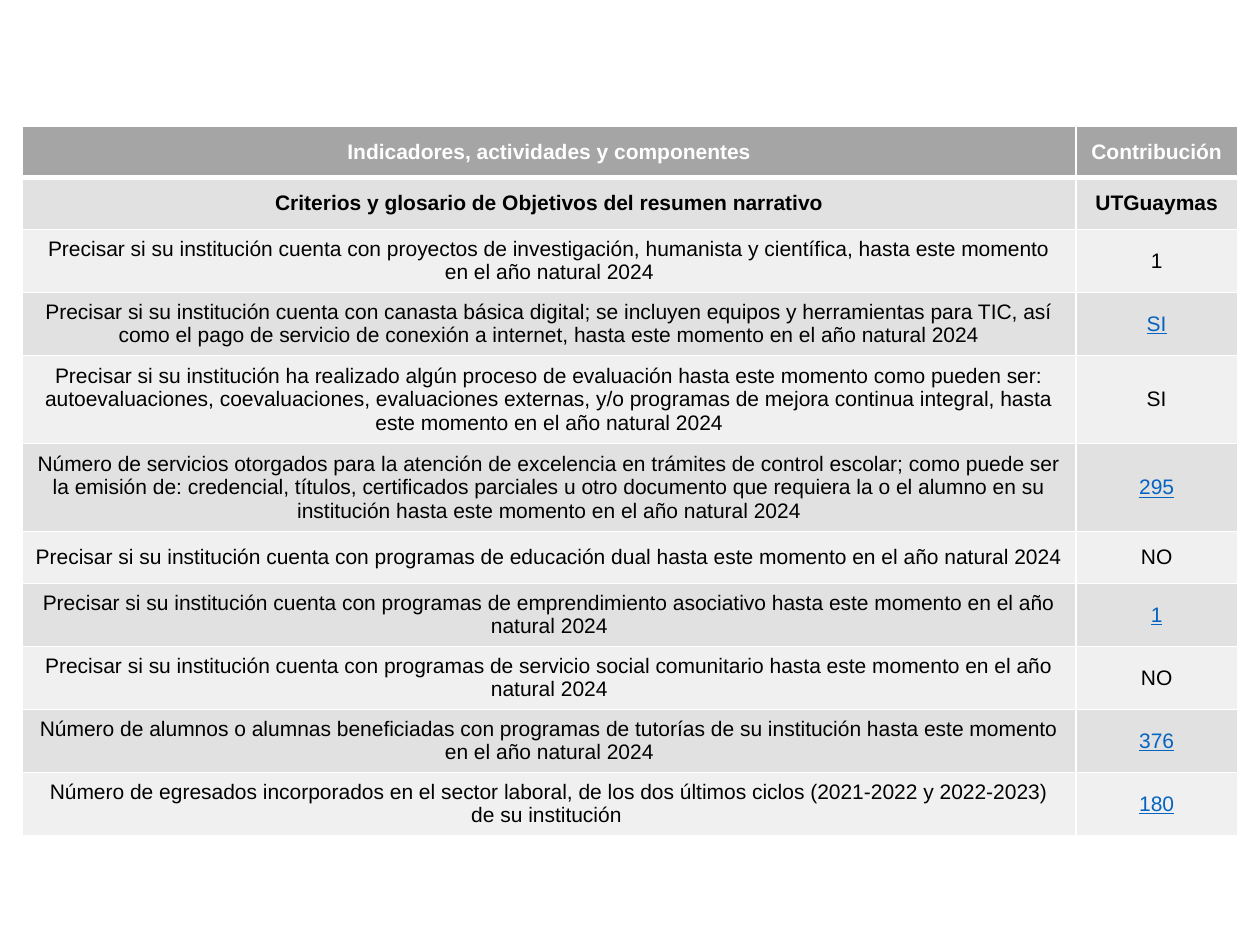
import lxml.etree
import pptx
import pptx.dml.color
import pptx.enum.text
import pptx.oxml.ns
import pptx.util
from pptx.util import Inches

COLORS = {
    "white": "FFFFFF", "black": "000000", "link": "0563C1",
    "header": "A5A5A5", "dark_band": "E1E1E1", "light_band": "F0F0F0",
}
COLUMN_WIDTHS = [8.36, 1.28]
HEIGHT_BY_LINES = {1: 0.41, 2: 0.5, 3: 0.7}

# Indicator, contribution, lines of text, contribution looks like a link
ROWS = [
    ("Indicadores, actividades y componentes", "Contribución", 1, False),
    ("Criterios y glosario de Objetivos del resumen narrativo", "UTGuaymas", 1, False),
    ("Precisar si su institución cuenta con proyectos de investigación, humanista y "
     "científica, hasta este momento en el año natural 2024", "1", 2, False),
    ("Precisar si su institución cuenta con canasta básica digital; se incluyen equipos y "
     "herramientas para TIC, así como el pago de servicio de conexión a internet, hasta "
     "este momento en el año natural 2024", "SI", 2, True),
    ("Precisar si su institución ha realizado algún proceso de evaluación hasta este "
     "momento como pueden ser: autoevaluaciones, coevaluaciones, evaluaciones externas, "
     "y/o programas de mejora continua integral, hasta este momento en el año natural 2024",
     "SI", 3, False),
    ("Número de servicios otorgados para la atención de excelencia en trámites de control "
     "escolar; como puede ser la emisión de: credencial, títulos, certificados parciales u "
     "otro documento que requiera la o el alumno en su institución hasta este momento en "
     "el año natural 2024", "295", 3, True),
    ("Precisar si su institución cuenta con programas de educación dual hasta este momento "
     "en el año natural 2024", "NO", 1, False),
    ("Precisar si su institución cuenta con programas de emprendimiento asociativo hasta "
     "este momento en el año natural 2024", "1", 2, True),
    ("Precisar si su institución cuenta con programas de servicio social comunitario hasta "
     "este momento en el año natural 2024", "NO", 2, False),
    ("Número de alumnos o alumnas beneficiadas con programas de tutorías de su institución "
     "hasta este momento en el año natural 2024", "376", 2, True),
    ("Número de egresados incorporados en el sector laboral, de los dos últimos ciclos "
     "(2021-2022 y 2022-2023) de su institución ", "180", 2, True),
]


class SlideBuilder:
    """Holds the style and the current slide."""

    font_name = "Arial"
    font_size = 12

    def __init__(self, page):
        self.page = page

    def color(self, name):
        return pptx.dml.color.RGBColor.from_string(COLORS[name])

    def borders(self, cell, widths):
        """Draw white cell borders; widths maps each side to points."""
        properties = cell._tc.get_or_add_tcPr()
        for position, side in enumerate("LRTB"):
            line = lxml.etree.Element(pptx.oxml.ns.qn(f"a:ln{side}"),
                                      w=str(pptx.util.Pt(widths[side])))
            fill = lxml.etree.SubElement(line, pptx.oxml.ns.qn("a:solidFill"))
            lxml.etree.SubElement(fill, pptx.oxml.ns.qn("a:srgbClr"), val=COLORS["white"])
            properties.insert(position, line)

    def cell(self, cell, text, fill, color, bold=False, underline=False):
        cell.fill.solid()
        cell.fill.fore_color.rgb = self.color(fill)
        cell.vertical_anchor = pptx.enum.text.MSO_ANCHOR.MIDDLE
        para = cell.text_frame.paragraphs[0]
        para.alignment = pptx.enum.text.PP_ALIGN.CENTER
        span = para.add_run()
        span.text = text
        font = para.font
        # Table styles outrank paragraph defaults, so the run carries the format
        for font in (para.font, span.font):
            font.name = self.font_name
            font.size = pptx.util.Pt(self.font_size)
            font.bold = bold
            font.underline = underline
            font.color.rgb = self.color(color)

    def table(self, left, top, rows):
        heights = [HEIGHT_BY_LINES[row[2]] for row in rows]
        frame = self.page.shapes.add_table(
            len(rows), len(COLUMN_WIDTHS), Inches(left), Inches(top),
            Inches(sum(COLUMN_WIDTHS)), Inches(sum(heights)))
        table = frame.table
        for column, width in zip(table.columns, COLUMN_WIDTHS):
            column.width = Inches(width)
        for index, (indicator, contribution, _, linked) in enumerate(rows):
            table.rows[index].height = Inches(heights[index])
            band = "dark_band" if index % 2 else "light_band"
            fill = band if index else "header"
            for column, text in enumerate((indicator, contribution)):
                is_link = linked and column == 1
                color = "link" if is_link else "black" if index else "white"
                cell = table.cell(index, column)
                self.cell(cell, text, fill, color, bold=index < 2, underline=is_link)
                # A thick rule separates the header from the body
                self.borders(cell, {"L": 1, "R": 1, "T": 3 if index == 1 else 1,
                                    "B": 3 if index == 0 else 1})


def main():
    deck = pptx.Presentation()
    deck.slide_width, deck.slide_height = Inches(10), Inches(7.5)
    page = deck.slides.add_slide(deck.slide_layouts[6])

    # Indicators table
    SlideBuilder(page).table(0.18, 1, ROWS)

    deck.save("out.pptx")


if __name__ == "__main__":
    main()
